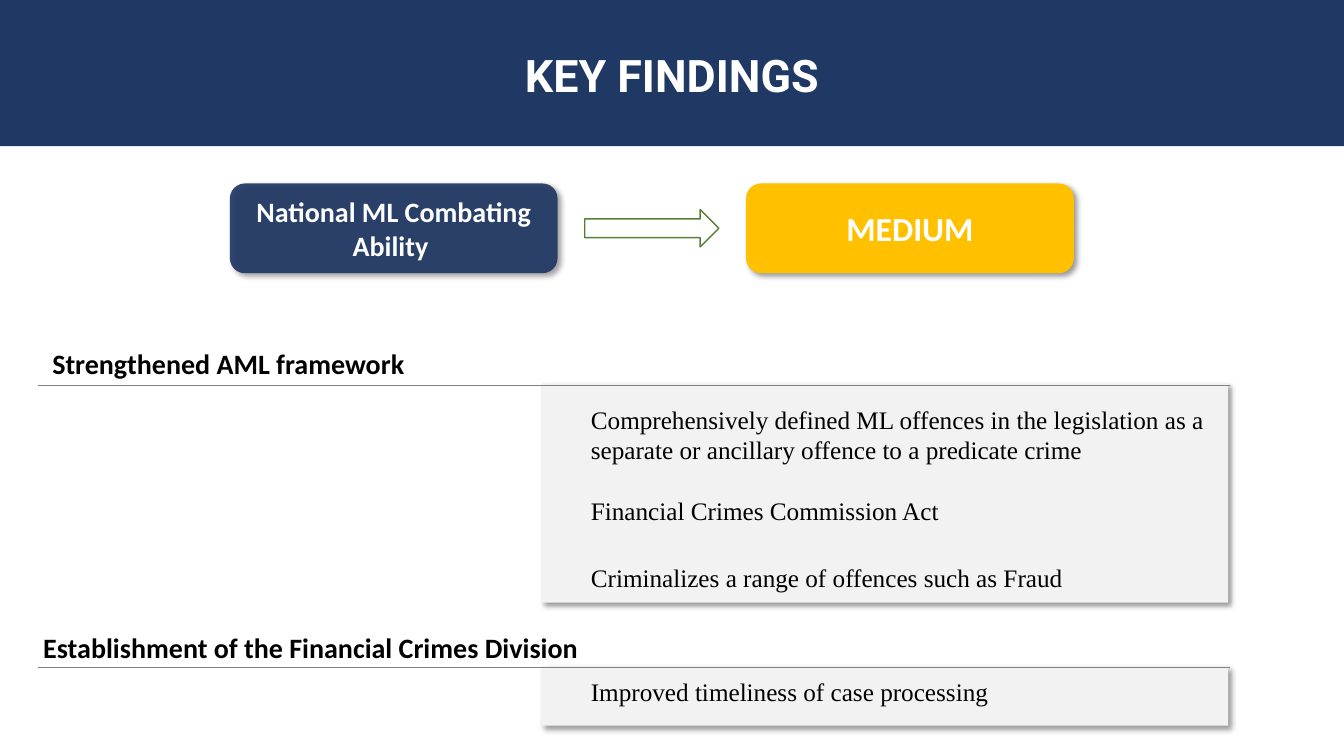
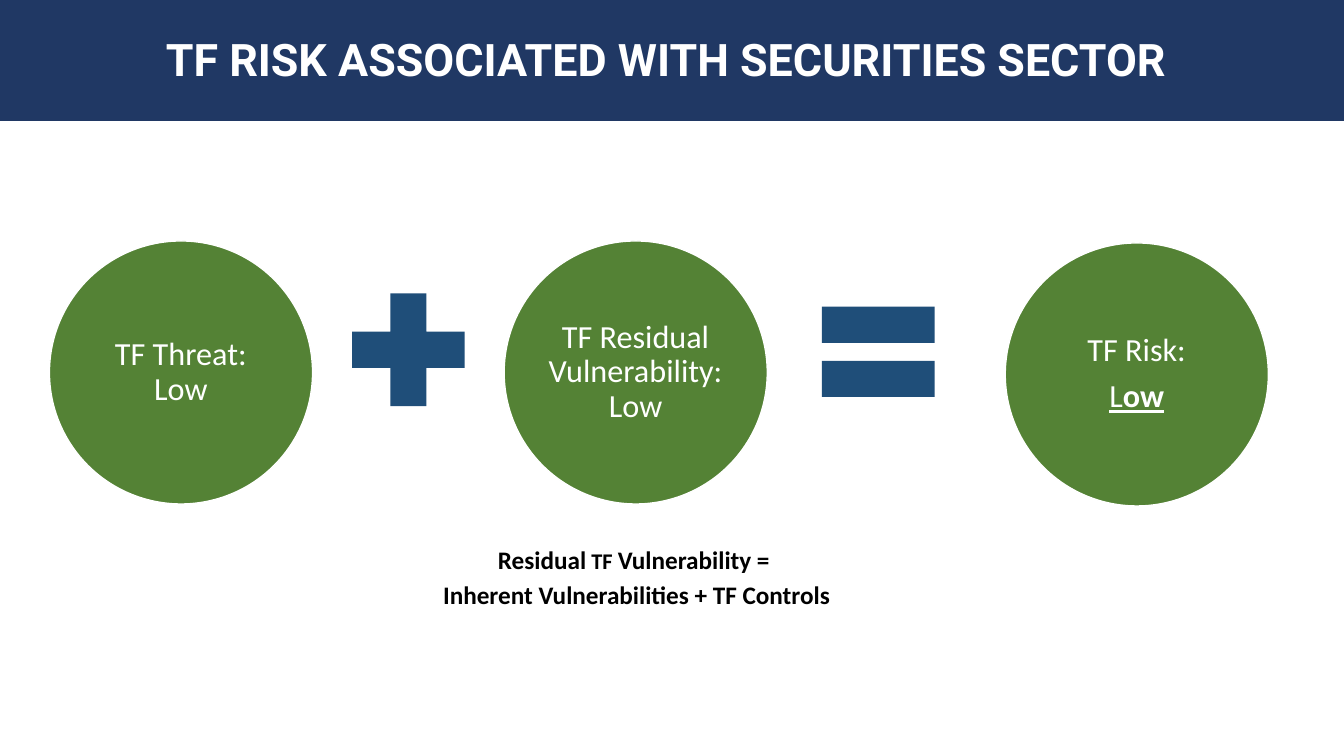
from lxml import etree
from pptx import Presentation
from pptx import util as u
from pptx.dml.color import RGBColor
from pptx.enum import shapes, text
from pptx.oxml.ns import qn

PX = 9144  # 100 px to the inch
NAVY, GOLD, GREEN, BLUE = "203864", "FFC000", "548235", "1F4E79"
WHITE, BLACK, PALE, GREY = "FFFFFF", "000000", "F2F2F2", "808080"
SANS, SERIF, DISPLAY = "Calibri", "Times New Roman", "Roboto"
CENTER, LEFT = text.PP_ALIGN.CENTER, text.PP_ALIGN.LEFT
TOP, MIDDLE = text.MSO_ANCHOR.TOP, text.MSO_ANCHOR.MIDDLE
SHAPE = shapes.MSO_SHAPE


def px(*lengths):
    return [u.Emu(n * PX) for n in lengths]


def rgb(color):
    return RGBColor.from_string(color)


def add_xml(parent, tag, **attrs):
    return etree.SubElement(parent, qn(tag), {k: str(v) for k, v in attrs.items()})


def place(sp, box):
    sp.left, sp.top, sp.width, sp.height = px(*box)


def paint(sp, fill=None, line=None, alpha=None):
    """Set fill and outline; alpha is an opacity in percent."""
    if fill:
        sp.fill.solid()
        sp.fill.fore_color.rgb = rgb(fill)
        if alpha:
            color = sp.fill._xPr.find(qn("a:solidFill"))[0]
            add_xml(color, "a:alpha", val=alpha * 1000)
    else:
        sp.fill.background()
    if line:
        sp.line.color.rgb = rgb(line)
        sp.line.width = u.Pt(1)
    else:
        sp.line.fill.background()


def drop_shadow(sp):
    spPr = sp._element.spPr
    for old in spPr.findall(qn("a:effectLst")):
        spPr.remove(old)
    shadow = add_xml(add_xml(spPr, "a:effectLst"), "a:outerShdw", blurRad=50800,
                     dist=38100, dir=2700000, algn="tl", rotWithShape=0)
    add_xml(add_xml(shadow, "a:srgbClr", val=BLACK), "a:alpha", val=40000)


def write(sp, paragraphs, size=18, font=SANS, color=WHITE, bold=False, align=CENTER,
          anchor=MIDDLE, margins=(10, 5, 10, 5), spacing=1.0, before=(), after=0):
    """Fill a shape with paragraphs, each a string or a list of (text, overrides)."""
    tf = sp.text_frame
    tf.word_wrap = True
    tf.auto_size = text.MSO_AUTO_SIZE.NONE
    tf.vertical_anchor = anchor
    tf.margin_left, tf.margin_top, tf.margin_right, tf.margin_bottom = px(*margins)
    for i, content in enumerate(paragraphs):
        p = tf.paragraphs[0] if i == 0 else tf.add_paragraph()
        p.alignment, p.line_spacing = align, spacing
        p.space_before = u.Pt(before[i] if before else 0)
        p.space_after = u.Pt(after)
        runs = [(content, {})] if isinstance(content, str) else content
        for words, over in runs:
            r = p.add_run()
            r.text = words
            r.font.name = font
            r.font.size = u.Pt(over.get("size", size))
            r.font.bold = over.get("bold", bold)
            r.font.underline = over.get("underline", False)
            r.font.color.rgb = rgb(color)


def add_shape(slide, kind, box, fill=None, line=None, alpha=None):
    sp = slide.shapes.add_shape(kind, *px(*box))
    sp.shadow.inherit = False
    paint(sp, fill, line, alpha)
    return sp


def add_text(slide, box, paragraphs, **fmt):
    write(slide.shapes.add_textbox(*px(*box)), paragraphs, color=BLACK, bold=True, **fmt)


def title_band(slide, words, top, height):
    sp = slide.shapes.title
    place(sp, (0, top, 1333, height))
    paint(sp, NAVY)
    write(sp, [words], size=32, font=DISPLAY, bold=True, spacing=1.07)


def rating_box(slide, left, words, size, fill, alpha=None):
    sp = add_shape(slide, SHAPE.ROUNDED_RECTANGLE, (left, 182, 325, 89), fill, alpha=alpha)
    drop_shadow(sp)
    write(sp, [words], size=size, bold=True)


def panel(sp, top, height, items, pad, before=()):
    """Turn a body placeholder into a grey panel with unbulleted items."""
    place(sp, (537, top, 681, height))
    paint(sp, PALE)
    drop_shadow(sp)
    write(sp, items, font=SERIF, color=BLACK, align=LEFT, anchor=TOP,
          margins=(49, pad, 0, 0), before=before)
    for p in sp.text_frame.paragraphs:
        pPr = p._p.get_or_add_pPr()
        pPr.set("marL", "0")
        pPr.set("indent", "0")
        add_xml(pPr, "a:buNone")


def rule(slide, y):
    line = slide.shapes.add_connector(shapes.MSO_CONNECTOR.STRAIGHT, *px(38, y, 1220, y))
    line.line.color.rgb = rgb(GREY)
    line.line.width = u.Pt(0.5)
    add_xml(line._element.spPr, "a:effectLst")


def circle(slide, left, top, paragraphs):
    sp = add_shape(slide, SHAPE.OVAL, (left, top, 261, 261), GREEN, WHITE)
    write(sp, paragraphs, size=23, margins=(3, 3, 3, 3), spacing=0.9, after=8)


def key_findings(prs):
    slide = prs.slides.add_slide(prs.slide_layouts[3])
    title_band(slide, "KEY FINDINGS", 0, 145)

    # Rating
    rating_box(slide, 228, "National ML Combating Ability ", 20, NAVY, alpha=92)
    rating_box(slide, 740, "MEDIUM", 24, GOLD)
    add_shape(slide, SHAPE.RIGHT_ARROW, (580, 208, 133, 37), line=GREEN)

    # Findings
    panel(slide.placeholders[1], 380, 218, [
        "Comprehensively defined ML offences in the legislation as a separate "
        "or ancillary offence to a predicate crime",
        "Financial Crimes Commission Act",
        "Criminalizes a range of offences such as Fraud",
    ], pad=21, before=(0, 22, 26))
    panel(slide.placeholders[2], 661, 59, ["Improved timeliness of case processing"], pad=10)
    for box, heading, y in (
            ((42, 339, 399, 44), "Strengthened AML framework", 382),
            ((33, 621, 568, 44), "Establishment of the Financial Crimes Division", 662)):
        add_text(slide, box, [heading], size=20, align=LEFT, anchor=TOP)
        rule(slide, y)


def securities_risk(prs):
    slide = prs.slides.add_slide(prs.slide_layouts[5])
    title_band(slide, "TF RISK ASSOCIATED WITH SECURITIES SECTOR ", -8, 128)

    # Equation
    circle(slide, 49, 239, ["TF Threat: Low"])
    add_shape(slide, SHAPE.MATH_PLUS, (329, 271, 152, 152), BLUE)
    circle(slide, 500, 239, ["TF Residual Vulnerability: Low"])
    add_shape(slide, SHAPE.MATH_EQUAL, (795, 273, 152, 152), BLUE)
    circle(slide, 997, 241, ["TF Risk:", [("L", {"underline": True}),
                                          ("ow", {"underline": True, "bold": True})]])

    # Definition
    add_text(slide, (376, 538, 511, 75), [
        [("Residual", {}), (" TF ", {"size": 16}), ("Vulnerability = ", {})],
        "Inherent Vulnerabilities + TF Controls",
    ], anchor=TOP, spacing=0.9, after=6)


def main():
    prs = Presentation()
    prs.slide_width, prs.slide_height = px(1333, 750)
    key_findings(prs)
    securities_risk(prs)
    prs.save("out.pptx")


if __name__ == "__main__":
    main()
